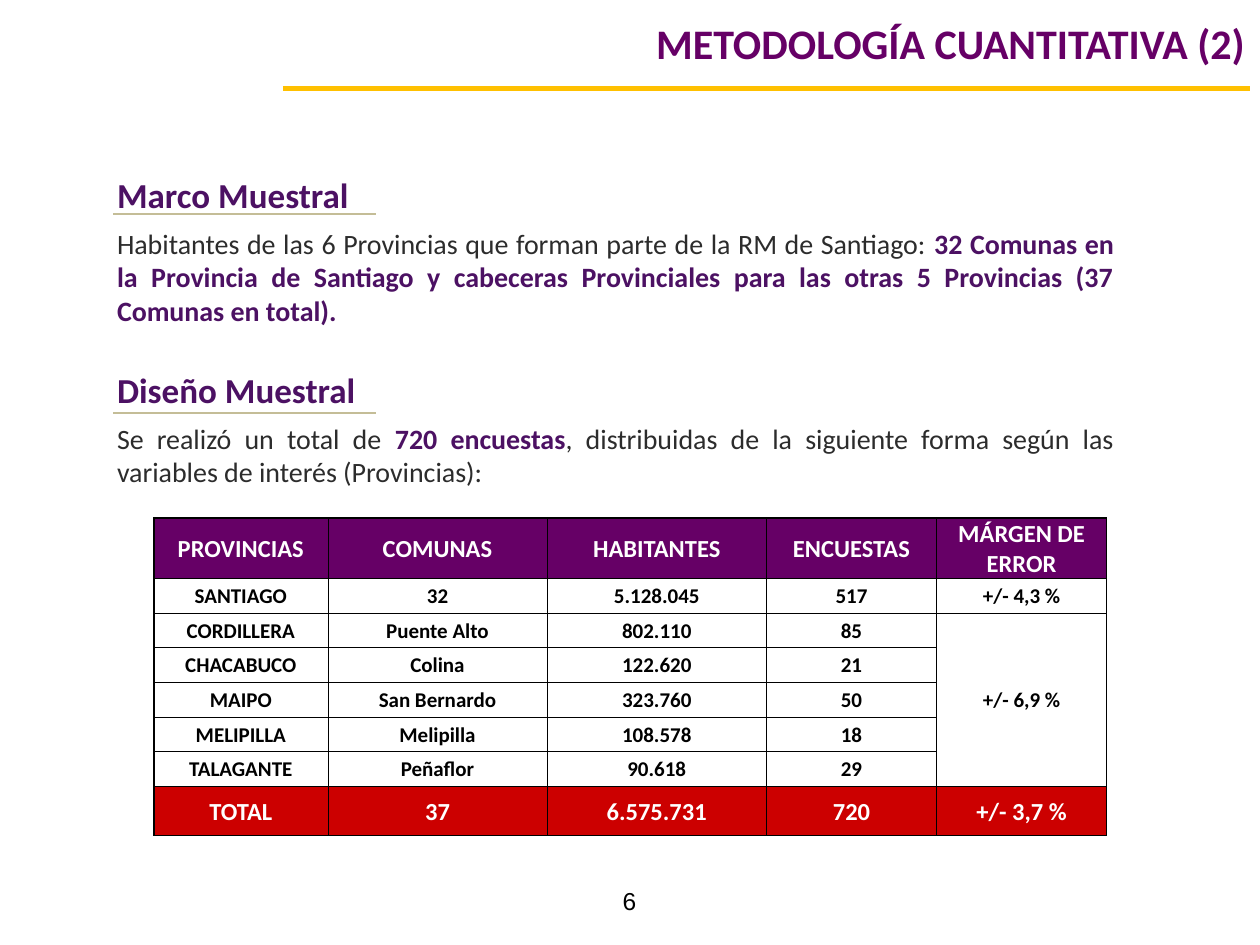
from lxml import etree
from pptx import Presentation
from pptx import util as u
from pptx.dml.color import RGBColor
from pptx.enum import shapes, text
from pptx.oxml import ns

COLORS = {
    "title": "660066", "heading": "4C1163", "body": "2C2C2C", "yellow": "FFC000",
    "rule": "C4BD97", "total": "CC0000", "white": "FFFFFF", "black": "000000",
}


def format_run(run, size, color, bold=True, name="Calibri"):
    run.font.size = u.Pt(size)
    run.font.bold = bold
    run.font.name = name
    run.font.color.rgb = RGBColor.from_string(COLORS[color])


def add_line(slide, left, right, top, color, width):
    line = slide.shapes.add_connector(
        shapes.MSO_CONNECTOR.STRAIGHT, u.Cm(left), u.Cm(top), u.Cm(right), u.Cm(top))
    line.line.color.rgb = RGBColor.from_string(COLORS[color])
    line.line.width = u.Pt(width)
    etree.SubElement(line._element.spPr, ns.qn("a:effectLst"))


presentation = Presentation()
presentation.slide_width, presentation.slide_height = u.Cm(25.4), u.Cm(19.05)
slide = presentation.slides.add_slide(presentation.slide_layouts[5])

# Title
title = slide.shapes.title
title.left, title.top, title.width, title.height = u.Cm(2.06), u.Cm(0), u.Cm(23.29), u.Cm(1.73)
title.text_frame.text = "METODOLOGÍA CUANTITATIVA (2)"
title.text_frame.auto_size = text.MSO_AUTO_SIZE.NONE
title.text_frame.vertical_anchor = text.MSO_ANCHOR.MIDDLE
title.text_frame.paragraphs[0].alignment = text.PP_ALIGN.RIGHT
format_run(title.text_frame.paragraphs[0].runs[0], 24, "title")

# Lines under the title and the two headings
add_line(slide, 5.7, 25.2, 1.78, "yellow", 3)
for top in (4.32, 8.33):
    add_line(slide, 2.28, 7.57, top, "rule", 1)

# Sampling text: size, space before, line spacing, alignment, (text, highlighted) pieces
LEFT, JUSTIFY = text.PP_ALIGN.LEFT, text.PP_ALIGN.JUSTIFY
PARAGRAPHS = [
    (20, 0, 1.3, LEFT, [("Marco Muestral", True)]),
    (16, 6, 1.0, JUSTIFY, [
        ("Habitantes de las 6 Provincias que forman parte de la RM de Santiago: ", False),
        ("32 Comunas en la Provincia de Santiago y cabeceras Provinciales "
         "para las otras 5 Provincias (37 Comunas en total).", True)]),
    (20, 24, 1.0, JUSTIFY, [("Diseño Muestral", True)]),
    (16, 6, 1.0, JUSTIFY, [
        ("Se realizó un total de ", False),
        ("720 encuestas", True),
        (", distribuidas de la siguiente forma según las variables de interés (Provincias):",
         False)]),
]
body = slide.shapes.add_textbox(u.Cm(2.11), u.Cm(3.12), u.Cm(20.6), u.Cm(7.06))
body.text_frame.word_wrap = True
for index, (size, before, spacing, alignment, pieces) in enumerate(PARAGRAPHS):
    paragraph = body.text_frame.add_paragraph() if index else body.text_frame.paragraphs[0]
    paragraph.alignment = alignment
    paragraph.line_spacing = spacing
    paragraph.space_before = u.Pt(before)
    for words, highlighted in pieces:
        run = paragraph.add_run()
        run.text = words
        format_run(run, size, "heading" if highlighted else "body", highlighted)

# Survey table
ROWS = [
    ("PROVINCIAS", "COMUNAS", "HABITANTES", "ENCUESTAS", "MÁRGEN DE ERROR"),
    ("SANTIAGO", "32", "5.128.045", "517", "+/- 4,3 %"),
    ("CORDILLERA", "Puente Alto", "802.110", "85", "+/- 6,9 %"),
    ("CHACABUCO", "Colina", "122.620", "21", ""),
    ("MAIPO", "San Bernardo", "323.760", "50", ""),
    ("MELIPILLA", "Melipilla", "108.578", "18", ""),
    ("TALAGANTE", "Peñaflor", "90.618", "29", ""),
    ("TOTAL", "37", "6.575.731", "720", "+/- 3,7 %"),
]
WIDTHS = [3.51, 4.42, 4.42, 3.43, 3.43]
HEIGHTS = [1.21] + [0.7] * 6 + [0.99]
LAST = len(ROWS) - 1
table = slide.shapes.add_table(len(ROWS), len(WIDTHS), u.Cm(3.1), u.Cm(10.44),
                               u.Cm(sum(WIDTHS)), u.Cm(sum(HEIGHTS))).table
table.first_row = table.horz_banding = False
for column, width in zip(table.columns, WIDTHS):
    column.width = u.Cm(width)
for row, height in zip(table.rows, HEIGHTS):
    row.height = u.Cm(height)
table.cell(2, 4).merge(table.cell(6, 4))

for r, values in enumerate(ROWS):
    fill = {0: "title", LAST: "total"}.get(r)
    for c, value in enumerate(values):
        cell = table.cell(r, c)
        cell.margin_left = cell.margin_right = cell.margin_top = u.Cm(0.03)
        cell.margin_bottom = 0
        cell.vertical_anchor = text.MSO_ANCHOR.MIDDLE
        if fill:
            cell.fill.solid()
            cell.fill.fore_color.rgb = RGBColor.from_string(COLORS[fill])
        else:
            cell.fill.background()
        if value:
            cell.text_frame.text = value
            paragraph = cell.text_frame.paragraphs[0]
            paragraph.alignment = text.PP_ALIGN.CENTER
            format_run(paragraph.runs[0], 14 if fill else 12, "white" if fill else "black")
        # Borders: thicker on the left, top and bottom edges of the table
        thick = {"L": c == 0, "R": False, "T": r == 0, "B": r == LAST}
        properties = cell._tc.get_or_add_tcPr()
        for position, side in enumerate("LRTB"):
            border = etree.Element(ns.qn(f"a:ln{side}"),
                                   w=str(u.Pt(1 if thick[side] else 0.5)))
            solid = etree.SubElement(border, ns.qn("a:solidFill"))
            etree.SubElement(solid, ns.qn("a:srgbClr"), val=COLORS["black"])
            properties.insert(position, border)

# Page number
number = slide.shapes.add_textbox(u.Cm(9.73), u.Cm(17.73), u.Cm(5.92), u.Cm(1.32))
number.text_frame.word_wrap = True
number.text_frame.text = "6"
number.text_frame.paragraphs[0].alignment = text.PP_ALIGN.CENTER
format_run(number.text_frame.paragraphs[0].runs[0], 14, "black", False, "Arial")

presentation.save("out.pptx")
